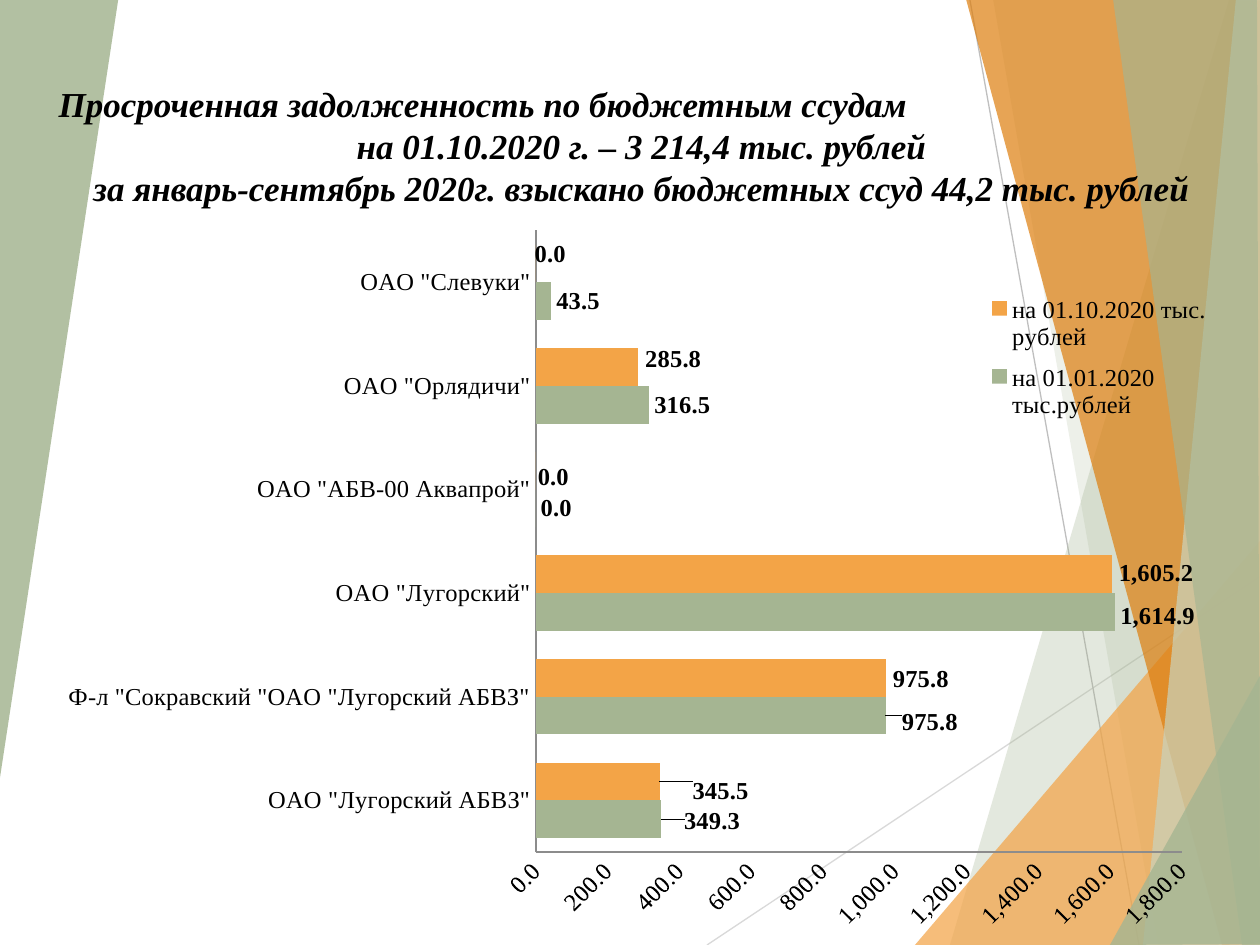
from dataclasses import dataclass

from lxml import etree
from pptx import Presentation
from pptx import util as u
from pptx.chart.data import CategoryChartData
from pptx.dml.color import RGBColor
from pptx.enum import chart as ch, shapes, text
from pptx.oxml import parse_xml
from pptx.oxml.ns import nsdecls, qn

SCALE = 914400 / 126


@dataclass(frozen=True)
class Theme:
    serif: str = "Times New Roman"
    sans: str = "Roboto"
    ink: str = "000000"
    sage: str = "A5B592"
    pale_sage: str = "C9D3BE"
    amber: str = "F3A447"
    dark_amber: str = "DD7E0E"
    axis: str = "8C8C8C"
    title_size: int = 20
    chart_size: int = 18
    label_size: int = 14


THEME = Theme()
NUMBER_FORMAT = "#,##0.0"
CHART_BOX = (50, 212, 1179, 717)

RAYS = [
    ((707, 945), (1261, 576), "D9D9D9"),
    ((970, 0), (1139, 945), "BFBFBF"),
]
FACETS = [
    ([(1229, 0), (950, 945), (1262, 946), (1261, 1)], THEME.sage, 30),
    ([(993, -1), (1158, 945), (1261, 945), (1261, -1)], THEME.sage, 20),
    ([(915, 945), (1260, 541), (1261, 945)], THEME.amber, 72),
    ([(966, -1), (1222, 945), (1261, 944), (1261, -1)], THEME.dark_amber, 70),
    ([(1236, -1), (1143, 945), (1261, 945), (1260, -1)], THEME.pale_sage, 70),
    ([(1113, -1), (1242, 945), (1260, 945), (1257, -1)], THEME.sage, 65),
    ([(1110, 945), (1261, 674), (1261, 944)], THEME.sage, 80),
    ([(-1, 0), (118, -1), (118, 1), (-1, 784)], THEME.sage, 85),
]
TITLE_LINES = [
    ("Просроченная задолженность по бюджетным ссудам", text.PP_ALIGN.LEFT),
    ("на 01.10.2020 г. – 3 214,4 тыс. рублей", text.PP_ALIGN.CENTER),
    ("за январь-сентябрь 2020г. взыскано бюджетных ссуд 44,2 тыс. рублей", text.PP_ALIGN.CENTER),
]
DEBTORS = [
    'ОАО "Лугорский АБВЗ"', 'Ф-л "Сокравский "ОАО "Лугорский АБВЗ"',
    'ОАО "Лугорский"', 'ОАО "АБВ-00 Аквапрой"',
    'ОАО "Орлядичи"', 'ОАО "Слевуки"',
]
DEBTS = [
    ("на 01.01.2020 тыс.рублей", (349.3, 975.8, 1614.9, 0, 316.5, 43.5), THEME.sage,
     [(18, 2), (11, 6), (0, 4)]),
    ("на 01.10.2020 тыс. рублей", (345.5, 975.8, 1605.2, 0, 285.8, 0), THEME.amber,
     [(28, 9), (2, 1), (2, -1), (-3, 6), (2, -8), (-6, -10)]),
]


def px(length):
    return u.Emu(round(length * SCALE))


def rgb(color):
    return RGBColor.from_string(color)


def set_font(font, size=THEME.label_size, name=THEME.serif, bold=False, italic=False):
    font.size, font.name, font.bold, font.italic = u.Pt(size), name, bold, italic
    font.color.rgb = rgb(THEME.ink)


def write_text(paragraph, content, align, **style):
    paragraph.alignment = align
    paragraph.line_spacing = u.Pt(24)
    run = paragraph.add_run()
    run.text = content
    set_font(run.font, **style)


def add_ray(slide, start, end, color):
    ray = slide.shapes.add_connector(
        shapes.MSO_CONNECTOR.STRAIGHT, *map(px, start + end))
    ray.line.color.rgb = rgb(color)
    ray.line.width = u.Pt(0.75)
    etree.SubElement(ray._element.spPr, qn("a:effectLst"))


def add_facet(slide, corners, color, opacity):
    builder = slide.shapes.build_freeform(*corners[0], scale=SCALE)
    builder.add_line_segments(corners[1:], close=True)
    facet = builder.convert_to_shape()
    facet.shadow.inherit = False
    facet.line.fill.background()
    facet.fill.solid()
    facet.fill.fore_color.rgb = rgb(color)
    tint = facet._element.spPr.find(".//" + qn("a:srgbClr"))
    etree.SubElement(tint, qn("a:alpha"), val=str(opacity * 1000))


def place_title(slide):
    title = slide.shapes.title
    slide.shapes._spTree.append(title._element)
    title.left, title.top, title.width, title.height = map(px, (46, 56, 1191, 159))
    frame = title.text_frame
    frame.word_wrap = True
    frame.auto_size = text.MSO_AUTO_SIZE.NONE
    frame.vertical_anchor = text.MSO_ANCHOR.BOTTOM
    for number, (line, align) in enumerate(TITLE_LINES):
        paragraph = frame.add_paragraph() if number else frame.paragraphs[0]
        write_text(paragraph, line, align, size=THEME.title_size, bold=True, italic=True)


def manual_layout(**settings):
    parts = "".join(f'<c:{key} val="{value}"/>' for key, value in settings.items())
    return parse_xml(
        f'<c:layout {nsdecls("c")}><c:manualLayout>{parts}</c:manualLayout></c:layout>')


def hide_leader_lines(labels):
    labels._element.append(parse_xml(
        f'<c:extLst {nsdecls("c")}><c:ext uri="{{CE6537A1-D6FC-4f65-9D91-7224C49458BB}}" '
        'xmlns:c15="http://schemas.microsoft.com/office/drawing/2012/chart">'
        '<c15:showLeaderLines val="0"/></c:ext></c:extLst>'))


def format_axis(axis):
    axis.has_major_gridlines = False
    axis.major_tick_mark = axis.minor_tick_mark = ch.XL_TICK_MARK.NONE
    axis.format.line.color.rgb = rgb(THEME.axis)
    axis.format.line.width = u.Pt(1)
    set_font(axis.tick_labels.font)


def format_series(series, color, label_shifts):
    series.format.fill.solid()
    series.format.fill.fore_color.rgb = rgb(color)
    labels = series.data_labels
    labels.show_value = True
    labels.number_format = NUMBER_FORMAT
    labels.number_format_is_linked = False
    labels.position = ch.XL_LABEL_POSITION.OUTSIDE_END
    set_font(labels.font, bold=True)
    for index, (dx, dy) in enumerate(label_shifts):
        label = series.points[index].data_label
        set_font(label.font, bold=True)
        label.position = ch.XL_LABEL_POSITION.OUTSIDE_END
        idx = label._dLbl.find(qn("c:idx"))
        idx.addnext(parse_xml(
            f'<c:numFmt {nsdecls("c")} formatCode="{NUMBER_FORMAT}" sourceLinked="0"/>'))
        idx.addnext(manual_layout(x=round(dx / CHART_BOX[2], 4), y=round(dy / CHART_BOX[3], 4)))
    hide_leader_lines(labels)


def add_debt_chart(slide):
    data = CategoryChartData(number_format=NUMBER_FORMAT)
    data.categories = DEBTORS
    for name, values, _, _ in DEBTS:
        data.add_series(name, values)
    chart = slide.shapes.add_chart(
        ch.XL_CHART_TYPE.BAR_CLUSTERED, *map(px, CHART_BOX), data).chart
    chart.has_title = False
    set_font(chart.font, size=THEME.chart_size, name=THEME.sans)

    plot = chart.plots[0]
    plot.gap_width, plot.overlap, plot.vary_by_categories = 75, 0, False
    for series, (_, _, color, shifts) in zip(plot.series, DEBTS):
        format_series(series, color, shifts)

    amounts = chart.value_axis
    for axis in (chart.category_axis, amounts):
        format_axis(axis)
    amounts.minimum_scale, amounts.maximum_scale, amounts.major_unit = 0, 1800, 200
    amounts.tick_labels.number_format = NUMBER_FORMAT
    amounts.tick_labels.number_format_is_linked = False
    amounts._element.find(".//" + qn("a:bodyPr")).set("rot", "-2700000")

    chart.has_legend = True
    legend = chart.legend
    legend.position = ch.XL_LEGEND_POSITION.RIGHT
    legend.include_in_layout = True
    set_font(legend.font)
    plot_area = chart._chartSpace.find(".//" + qn("c:plotArea"))
    for holder in (plot_area, legend._element):
        for default in holder.findall(qn("c:layout")):
            holder.remove(default)
    legend._element.find(qn("c:legendPos")).addnext(manual_layout(
        xMode="edge", yMode="edge", x=0.79, y=0.1, w=0.2, h=0.21))
    plot_area.insert(0, manual_layout(
        layoutTarget="inner", xMode="edge", yMode="edge", x=0.412, y=0.026, w=0.548, h=0.875))


def main():
    deck = Presentation()
    deck.slide_width, deck.slide_height = px(1260), px(945)
    slide = deck.slides.add_slide(deck.slide_layouts[5])
    for ray in RAYS:
        add_ray(slide, *ray)
    for facet in FACETS:
        add_facet(slide, *facet)
    place_title(slide)
    add_debt_chart(slide)
    deck.save("out.pptx")


if __name__ == "__main__":
    main()
